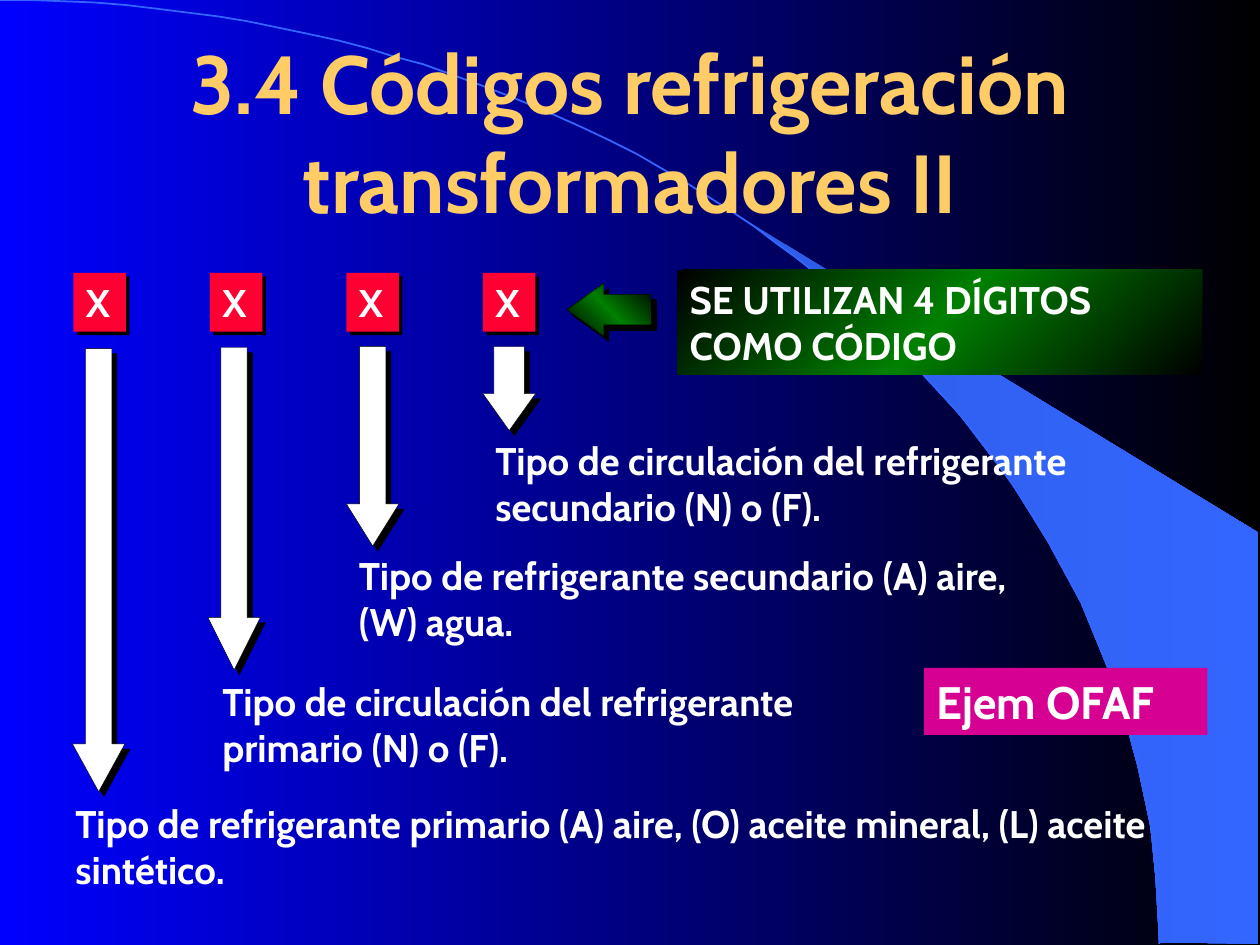
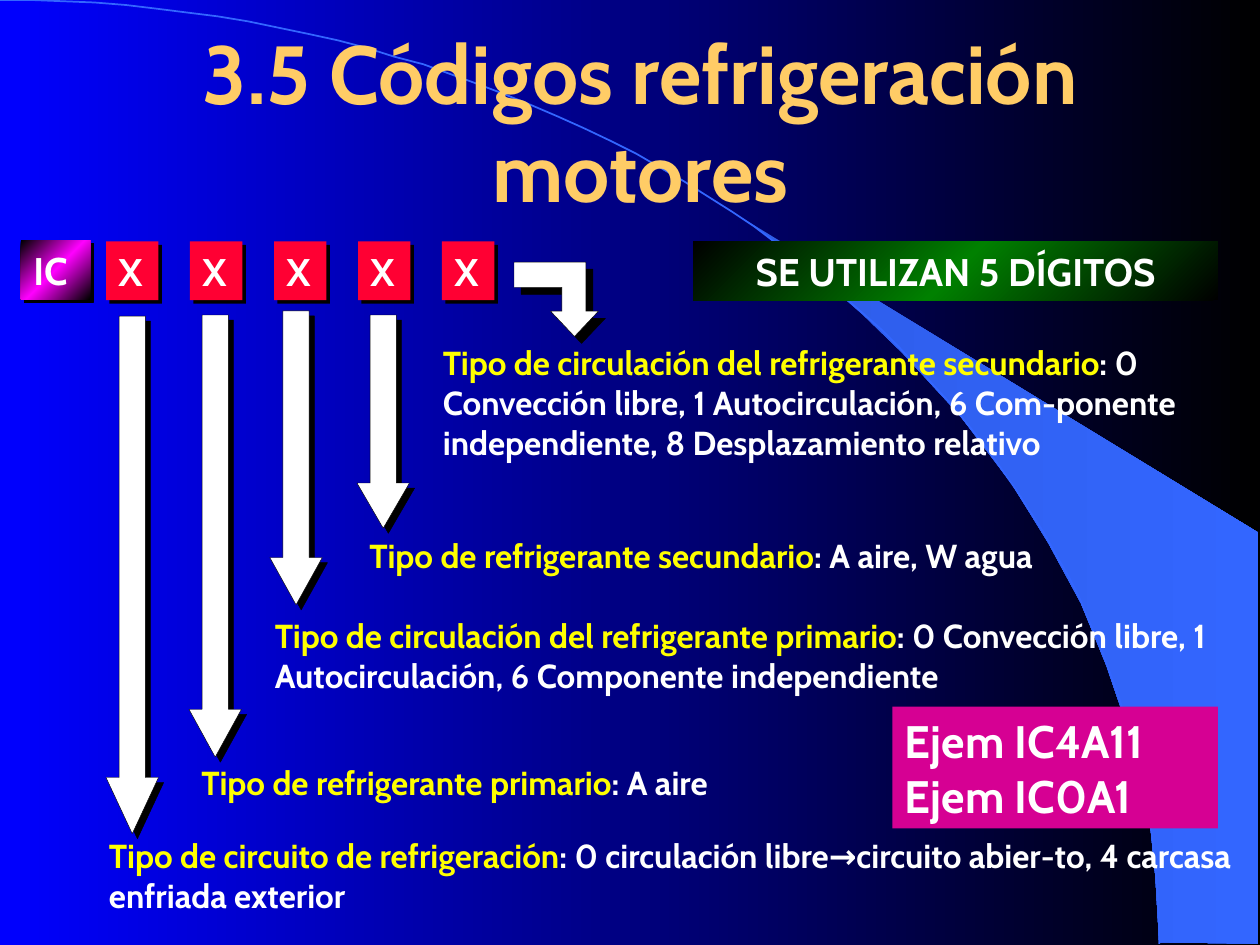
import copy

import pptx
import pptx.dml.color
import pptx.enum.shapes
import pptx.enum.text
import pptx.oxml
import pptx.oxml.ns
import pptx.util

COLOURS = {
    "blue": "0000FF", "black": "000000", "swoosh_dark": "2E5DE7", "swoosh": "3366FF",
    "title": "FFCC66", "white": "FFFFFF", "red": "FF0033", "green": "008000",
    "magenta": "FF00FF", "purple": "D60093", "yellow": "FFFF00",
}
FONT = "Cabin"
GRID = pptx.util.Inches(1 / 12)  # the slide is 120 columns by 90 rows
HUNDREDTH = pptx.util.Inches(0.01)  # unit of the outlines
GREEN_BAND = ["black", "green", "black"]
MAGENTA_BAND = ["black", "magenta", "black"]
SHADOW = (
    '<a:effectLst xmlns:a="http://schemas.openxmlformats.org/drawingml/2006/main">'
    '<a:outerShdw dist="{}" dir="2700000" algn="ctr" rotWithShape="0">'
    '<a:srgbClr val="000000"/></a:outerShdw></a:effectLst>'
)
SHAPES = pptx.enum.shapes.MSO_SHAPE
ALIGN = pptx.enum.text.PP_ALIGN
ANCHOR = pptx.enum.text.MSO_ANCHOR


def write(shape, text, size=22, colour="white", lead="", align=ALIGN.LEFT,
          anchor=ANCHOR.MIDDLE, shadow=False):
    """Fill a shape with bold text; lead is a yellow opening of the first line."""
    frame = shape.text_frame
    frame.word_wrap = True
    frame.auto_size = pptx.enum.text.MSO_AUTO_SIZE.NONE
    frame.vertical_anchor = anchor
    for number, line in enumerate(text.split("\n")):
        paragraph = frame.add_paragraph() if number else frame.paragraphs[0]
        paragraph.alignment = align
        parts = [(line, colour)]
        if lead and number == 0:
            parts.insert(0, (lead, "yellow"))
        for part, part_colour in parts:
            run = paragraph.add_run()
            run.text = part
            run.font.size = pptx.util.Pt(size)
            run.font.bold = True
            run.font.name = FONT
            run.font.color.rgb = pptx.dml.color.RGBColor.from_string(COLOURS[part_colour])
            if shadow:
                solid = run._r.rPr.find(pptx.oxml.ns.qn("a:solidFill"))
                solid.addnext(pptx.oxml.parse_xml(SHADOW.format(pptx.util.Pt(2))))


def paint(target, colours, angle=45, outline=None, width=0.25, shadow=0):
    """Give a shape or background a plain or gradient fill, a line and a shadow."""
    fill = target.fill
    rgb = [pptx.dml.color.RGBColor.from_string(COLOURS[name]) for name in colours]
    if not rgb:
        fill.background()
    elif len(rgb) == 1:
        fill.solid()
        fill.fore_color.rgb = rgb[0]
    else:
        fill.gradient()
        fill.gradient_angle = (360 - angle) % 360
        first = fill.gradient_stops[0]._gs
        for _ in rgb[2:]:
            first.addnext(copy.deepcopy(first))
        for number, stop in enumerate(fill.gradient_stops):
            stop.position = number / (len(rgb) - 1)
            stop.color.rgb = rgb[number]
    if not hasattr(target, "line"):
        return
    if outline:
        target.line.color.rgb = pptx.dml.color.RGBColor.from_string(COLOURS[outline])
        target.line.width = pptx.util.Pt(width)
    else:
        target.line.fill.background()
    if shadow:
        distance = pptx.util.Pt(shadow)
        target._element.spPr.append(pptx.oxml.parse_xml(SHADOW.format(distance)))
    else:
        target.shadow.inherit = False


presentation = pptx.Presentation()
presentation.slide_width = pptx.util.Inches(10)
presentation.slide_height = pptx.util.Inches(7.5)
title_only = presentation.slide_layouts[5]
master = presentation.slide_master

# Contents. Rows of explanations: text column, row, width, height, lead, text
# Arrows: column, top row, bottom row, shaft share, head share
# Bands: column, row, width, height, colours, text, size, alignment, shadow
contents = [
    {
        "title": ("3.4 Códigos refrigeración transformadores II", 8, 5),
        "digits": (4, 7, 13, 26),
        "explanations": [
            (46, 41, 69, 10, "", "Tipo de circulación del refrigerante secundario (N) o (F)."),
            (33, 52, 69, 10, "", "Tipo de refrigerante secundario (A) aire, (W) agua."),
            (20, 64, 69, 10, "", "Tipo de circulación del refrigerante primario (N) o (F)."),
            (6, 75.6, 109, 10, "",
             "Tipo de refrigerante primario (A) aire, (O) aceite mineral, (L) aceite sintético."),
        ],
        "text_size": 22,
        "arrows": [(46, 33, 41, 0.58, 0.7), (33, 33, 52, 0.5, 0.8),
                   (19.8, 33.1, 63.8, 0.5, 1), (6.9, 33.2, 75.4, 0.5, 0.91)],
        "bands": [
            (64.5, 25.7, 50, 10, GREEN_BAND, "SE UTILIZAN 4 DÍGITOS\nCOMO CÓDIGO",
             22, ALIGN.LEFT, 0),
            (88, 63.6, 27, 6.4, ["purple"], "Ejem OFAF", 26, ALIGN.LEFT, 0),
        ],
    },
    {
        "title": ("3.5 Códigos refrigeración motores", 9, 4),
        "digits": (5, 10.1, 8, 23),
        "explanations": [
            (41, 32, 78, 16.3, "Tipo de circulación del refrigerante secundario",
             ": 0 Convección libre, 1 Autocirculación, 6 Com-ponente independiente, "
             "8 Desplazamiento relativo"),
            (34, 50.4, 82, 5, "Tipo de refrigerante secundario", ": A aire, W agua"),
            (25, 58, 95, 12.6, "Tipo de circulación del refrigerante primario",
             ": 0 Convección libre, 1 Autocirculación, 6 Componente independiente"),
            (18, 72, 82, 5, "Tipo de refrigerante primario", ": A aire"),
            (9.2, 79, 109.8, 8.9, "Tipo de circuito de refrigeración",
             ": 0 circulación libre→circuito abier-to, 4 carcasa enfriada exterior"),
        ],
        "text_size": 19,
        "arrows": [(34, 30, 50.3, 0.5, 0.86), (25.7, 29.6, 57.6, 0.5, 0.9),
                   (18, 30, 72.1, 0.5, 0.91), (10.1, 30.1, 79.4, 0.5, 1.07)],
        "bands": [
            (66, 23, 50, 5.6, GREEN_BAND, "SE UTILIZAN 5 DÍGITOS", 22, ALIGN.CENTER, 0),
            (85, 67.3, 31, 11.6, ["purple"], "Ejem IC4A11\nEjem IC0A1", 26, ALIGN.LEFT, 0),
            (2, 22.9, 6.6, 5.6, MAGENTA_BAND, "IC", 22, ALIGN.LEFT, 2.8),
        ],
    },
]

slides = [presentation.slides.add_slide(title_only) for _ in contents]

# Shared backdrop: gradient, swoosh and thin arc, kept on the master
paint(master.background, ["blue", "black"], angle=0)
swoosh_points = [
    (920, 748), (999, 749), (999, 423), (589, 173), (624, 199), (653, 222), (685, 250),
    (716, 280), (762, 330), (803, 384), (832, 431), (858, 479), (878, 528), (893, 572),
    (903, 609), (913, 656), (917, 696),
]
arc_points = []
for step in range(61):
    t = step / 60
    arc_points.append((3 * (1 - t) ** 2 * t * 508 + 3 * (1 - t) * t ** 2 * 920 + t ** 3 * 920,
                       3 * (1 - t) * t ** 2 * 335 + t ** 3 * 749))
backdrop = [(swoosh_points, True, ["swoosh_dark", "swoosh"], None),
            (arc_points, False, [], "swoosh")]
for position, (points, closed, colours, outline) in enumerate(backdrop):
    builder = slides[0].shapes.build_freeform(*points[0], scale=HUNDREDTH)
    builder.add_line_segments(points[1:], close=closed)
    shape = builder.convert_to_shape()
    paint(shape, colours, angle=0, outline=outline, width=1)
    master.shapes._spTree.insert(2 + position, shape._element)

for slide, content in zip(slides, contents):
    # Title
    text, column, row = content["title"]
    title = slide.shapes.title
    title.left, title.top = int(column * GRID), int(row * GRID)
    title.width, title.height = 104 * GRID, 15 * GRID
    write(title, text, size=47, colour="title", align=ALIGN.CENTER, shadow=True)

    # Code digits
    count, first_column, step, row = content["digits"]
    for number in range(count):
        column = first_column + number * step
        digit = slide.shapes.add_shape(SHAPES.RECTANGLE, int(column * GRID), row * GRID,
                                       5 * GRID, int(5.6 * GRID))
        paint(digit, ["red"], shadow=2.8)
        write(digit, "X")

    # Explanations
    for column, row, width, height, lead, text in content["explanations"]:
        box = slide.shapes.add_textbox(*(int(side * GRID) for side in (column, row, width, height)))
        write(box, text, size=content["text_size"], lead=lead, anchor=ANCHOR.TOP, shadow=True)

    # Arrows from digits to explanations
    for column, top, bottom, shaft, head in content["arrows"]:
        arrow = slide.shapes.add_shape(SHAPES.DOWN_ARROW, int(column * GRID), int(top * GRID),
                                       5 * GRID, int((bottom - top) * GRID))
        arrow.adjustments[0], arrow.adjustments[1] = shaft, head
        paint(arrow, ["white"], outline="black", shadow=4.2)

    # Bands with the rule and the examples
    for column, row, width, height, colours, text, size, align, shadow in content["bands"]:
        band = slide.shapes.add_shape(SHAPES.RECTANGLE,
                                      *(int(side * GRID) for side in (column, row, width, height)))
        paint(band, colours, shadow=shadow)
        write(band, text, size=size, align=align)

# First slide: arrow from the rule to the digits
pointer = slides[0].shapes.add_shape(SHAPES.DOWN_ARROW, int(55.5 * GRID), int(25.5 * GRID),
                                     5 * GRID, 8 * GRID)
pointer.rotation = 90
pointer.adjustments[0], pointer.adjustments[1] = 0.58, 0.7
paint(pointer, GREEN_BAND, outline="black", shadow=4.2)

# Second slide: bent arrow from the last digit
bent_points = [(408, 208), (465, 208), (465, 247), (475, 247), (456, 267),
               (437, 247), (446, 247), (446, 228), (408, 228)]
builder = slides[1].shapes.build_freeform(*bent_points[0], scale=HUNDREDTH)
builder.add_line_segments(bent_points[1:])
bent_arrow = builder.convert_to_shape()
paint(bent_arrow, ["white"], outline="black", shadow=5.7)

presentation.save("out.pptx")
